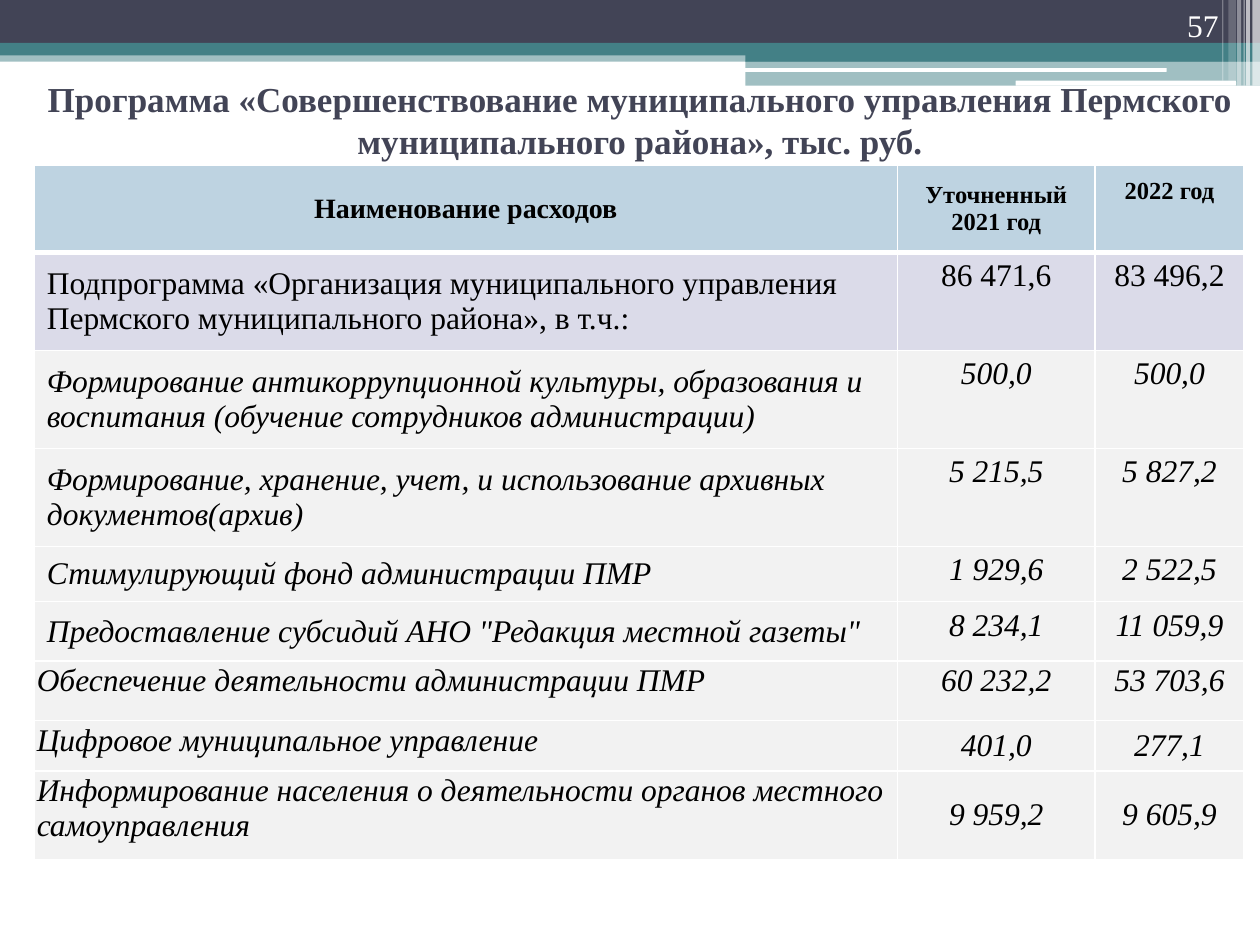
"""Builds a budget table slide with a banded header."""
from typing import NamedTuple

from lxml.etree import SubElement
from pptx import Presentation
from pptx.dml.color import RGBColor
from pptx.enum.shapes import MSO_SHAPE
from pptx.enum.text import MSO_ANCHOR, PP_ALIGN
from pptx.oxml.ns import qn
from pptx.util import Pt

C = {"navy": "424456", "teal": "438086", "white": "FFFFFF", "black": "000000",
     "head": "BED3E1", "total": "DBDBE9", "item": "F2F2F2"}
FONT = "Times New Roman"
TOP, MID, LOW = MSO_ANCHOR.TOP, MSO_ANCHOR.MIDDLE, MSO_ANCHOR.BOTTOM


class Bar(NamedTuple):
    left: float
    top: float
    width: float
    height: float
    color: str = "white"
    alpha: int = 100
    rounded: bool = False


class Row(NamedTuple):
    height: float
    texts: tuple
    anchors: tuple = (MID, TOP, TOP)
    margins: tuple = (7.2, 3.6)
    fill: str = "item"
    sizes: tuple = (18, 18, 18)
    bold: bool = False
    italic: bool = True
    name_align: PP_ALIGN = PP_ALIGN.LEFT


TIGHT = (1.44, 1.44)
BARS = [
    Bar(0, 28.8, 720, 6.5, "teal", 50),
    Bar(0, 0, 720, 24.5, "navy"),
    Bar(0, 24.5, 720, 7.2, "teal"),
    Bar(426, 28.1, 294, 7.2, "teal"),
    Bar(426, 34.6, 294, 14.4, "teal", 50),
    Bar(425.5, 38.9, 241.2, 2.2, rounded=True),
    Bar(580.3, 46.1, 126, 2.9, rounded=True),
    Bar(715.7, 0, 4.3, 49, alpha=65),
    Bar(712.1, 0, 2.2, 49, alpha=65),
    Bar(710.6, 0, 0.7, 49, alpha=60),
    Bar(707, 0, 2.2, 49, alpha=40),
    Bar(702, 0, 4.3, 46.1, alpha=20),
    Bar(698.4, 0, 0.7, 46.1, alpha=30),
]
WIDTHS = (493.2, 113, 85)
ROWS = [
    Row(49.7, ("Наименование расходов", "Уточненный 2021 год", "2022 год"), (MID,) * 3,
        fill="head", sizes=(16, 14, 14), bold=True, italic=False, name_align=PP_ALIGN.CENTER),
    Row(56, ("Подпрограмма «Организация муниципального управления Пермского "
             "муниципального района», в т.ч.:", "86 471,6", "83 496,2"),
        fill="total", italic=False),
    Row(56, ("Формирование антикоррупционной культуры, образования и воспитания "
             "(обучение сотрудников администрации)", "500,0", "500,0")),
    Row(56, ("Формирование, хранение, учет, и использование архивных документов(архив)",
             "5 215,5", "5 827,2")),
    Row(31.7, ("Стимулирующий фонд администрации ПМР", "1 929,6", "2 522,5")),
    Row(33.8, ('Предоставление субсидий АНО "Редакция местной газеты"', "8 234,1", "11 059,9")),
    Row(34.2, ("Обеспечение деятельности администрации ПМР", "60 232,2", "53 703,6"),
        (TOP,) * 3, TIGHT),
    Row(28.8, ("Цифровое муниципальное управление", "401,0", "277,1"), (TOP, MID, MID), TIGHT),
    Row(50.5, ("Информирование населения о деятельности органов местного самоуправления",
               "9 959,2", "9 605,9"), (TOP, MID, MID), TIGHT),
]


def rgb(name: str) -> RGBColor:
    """Return a palette colour."""
    return RGBColor.from_string(C[name])


def put_text(tf, text: str, *, size: float, color: str = "black", bold: bool = False,
             italic: bool = False, align: PP_ALIGN = PP_ALIGN.CENTER) -> None:
    """Write one formatted paragraph into a text frame."""
    p = tf.paragraphs[0]
    p.alignment = align
    r = p.add_run()
    r.text = text
    f = r.font
    f.name, f.size, f.bold, f.italic = FONT, Pt(size), bold, italic
    f.color.rgb = rgb(color)


def add_box(s, box: tuple, text: str, anchor: MSO_ANCHOR, **fmt) -> None:
    """Add a wrapping text box."""
    tf = s.shapes.add_textbox(*map(Pt, box)).text_frame
    tf.word_wrap = True
    tf.vertical_anchor = anchor
    put_text(tf, text, **fmt)


def add_bar(s, bar: Bar) -> None:
    """Add a borderless bar with optional transparency."""
    kind = MSO_SHAPE.ROUNDED_RECTANGLE if bar.rounded else MSO_SHAPE.RECTANGLE
    sp = s.shapes.add_shape(kind, *map(Pt, bar[:4]))
    sp.shadow.inherit = False
    sp.line.fill.background()
    sp.fill.solid()
    sp.fill.fore_color.rgb = rgb(bar.color)
    if bar.alpha < 100:
        clr = next(sp.fill._xPr.iter(qn("a:srgbClr")))
        SubElement(clr, qn("a:alpha"), val=str(bar.alpha * 1000))


def set_borders(cell, top: float, bottom: float) -> None:
    """Give a cell white borders of the stated widths."""
    tcPr = cell._tc.get_or_add_tcPr()
    for side, width in (("L", 1), ("R", 1), ("T", top), ("B", bottom)):
        ln = SubElement(tcPr, qn(f"a:ln{side}"), w=str(Pt(width)))
        SubElement(SubElement(ln, qn("a:solidFill")), qn("a:srgbClr"), val=C["white"])


def add_budget(s, left: float, top: float) -> None:
    """Add the budget table."""
    height = sum(row.height for row in ROWS)
    frame = s.shapes.add_table(len(ROWS), len(WIDTHS), Pt(left), Pt(top),
                               Pt(sum(WIDTHS)), Pt(height))
    tbl = frame.table
    tbl.first_row = tbl.horz_banding = False
    for col, width in zip(tbl.columns, WIDTHS):
        col.width = Pt(width)
    for i, row in enumerate(ROWS):
        tbl.rows[i].height = Pt(row.height)
        for j, text in enumerate(row.texts):
            cell = tbl.cell(i, j)
            set_borders(cell, 3 if i == 1 else 1, 3 if i == 0 else 1)
            cell.fill.solid()
            cell.fill.fore_color.rgb = rgb(row.fill)
            cell.vertical_anchor = row.anchors[j]
            side, edge = map(Pt, row.margins)
            cell.margin_left = cell.margin_right = side
            cell.margin_top = cell.margin_bottom = edge
            put_text(cell.text_frame, text, size=row.sizes[j], bold=row.bold,
                     italic=row.italic, align=PP_ALIGN.CENTER if j else row.name_align)
    tbl.cell(0, 2).margin_bottom = Pt(24)


def main() -> None:
    """Build and save the slide."""
    prs = Presentation()
    prs.slide_width, prs.slide_height = Pt(720), Pt(540)
    s = prs.slides.add_slide(prs.slide_layouts[6])
    for bar in BARS:
        add_bar(s, bar)
    add_box(s, (11.5, 37.4, 708.5, 62), "Программа «Совершенствование муниципального управления "
            "Пермского муниципального района», тыс. руб.", MID, size=20, color="navy", bold=True)
    add_budget(s, 19.6, 94.5)
    add_box(s, (643.7, 0, 59.8, 28.8), "57", LOW, size=18, color="white", align=PP_ALIGN.RIGHT)
    prs.save("out.pptx")


if __name__ == "__main__":
    main()
